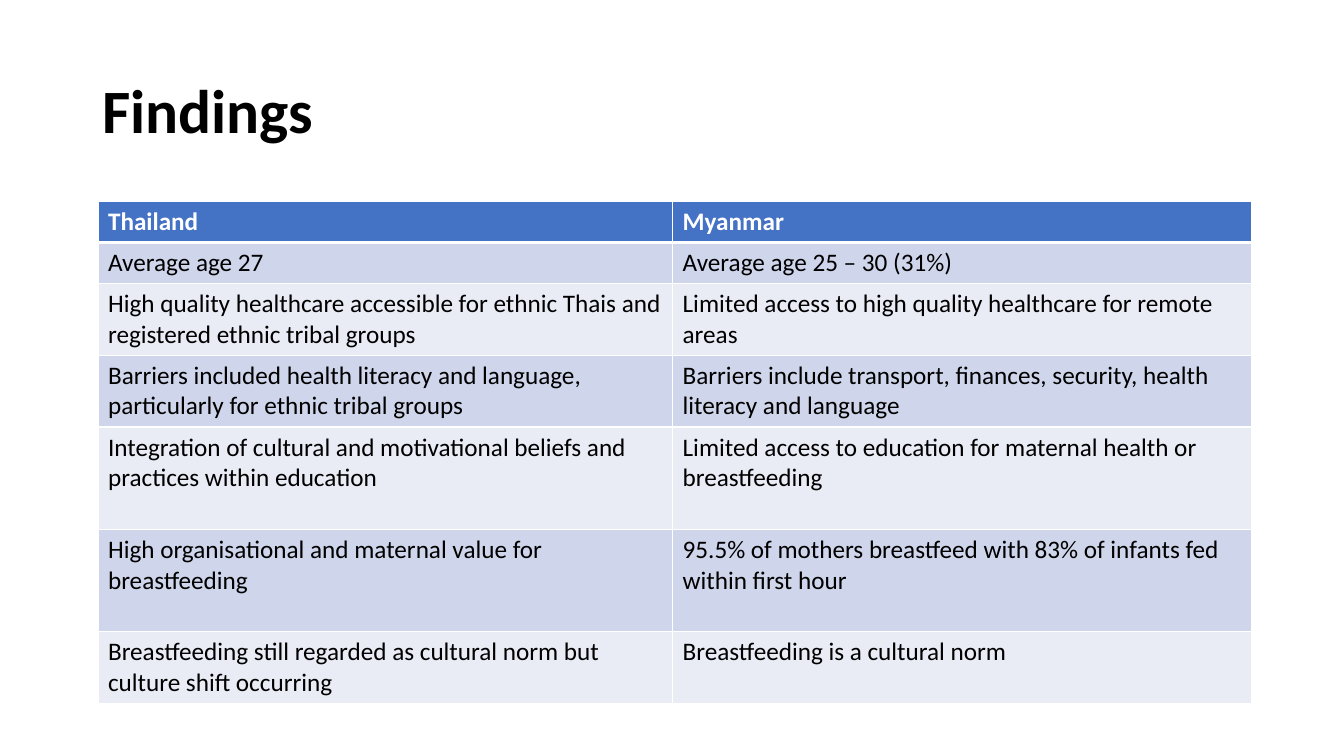
from dataclasses import dataclass

from lxml import etree
from pptx import Presentation
from pptx.dml.color import RGBColor
from pptx.enum.text import MSO_ANCHOR
from pptx.oxml.ns import qn
from pptx.slide import Slide
from pptx.table import _Cell
from pptx.util import Cm, Pt

MIDDLE = MSO_ANCHOR.MIDDLE
FONT = "Calibri"
BLACK, WHITE = "000000", "FFFFFF"
HEADER_FILL = "4472C4"
BAND_FILLS = ("E9EBF5", "CFD5EA")
COLUMN_WIDTHS = (14.48, 14.6)
THIN, THICK = 1, 3


@dataclass(frozen=True)
class Finding:
    thailand: str
    myanmar: str
    height: float


FINDINGS = (
    Finding("Thailand", "Myanmar", 1.03),
    Finding("Average age 27", "Average age 25 – 30 (31%)", 1.03),
    Finding(
        "High quality healthcare accessible for ethnic Thais and registered ethnic tribal groups",
        "Limited access to high quality healthcare for remote areas",
        1.81,
    ),
    Finding(
        "Barriers included health literacy and language, particularly for ethnic tribal groups",
        "Barriers include transport, finances, security, health literacy and language",
        1.81,
    ),
    Finding(
        "Integration of cultural and motivational beliefs and practices within education",
        "Limited access to education for maternal health or breastfeeding",
        2.58,
    ),
    Finding(
        "High organisational and maternal value for breastfeeding",
        "95.5% of mothers breastfeed with 83% of infants fed within first hour",
        2.58,
    ),
    Finding(
        "Breastfeeding still regarded as cultural norm but culture shift occurring",
        "Breastfeeding is a cultural norm",
        1.81,
    ),
)


def rgb(color: str) -> RGBColor:
    return RGBColor.from_string(color)


def set_text(p, text: str, size: float, color: str, bold: bool) -> None:
    p.text = text
    p.font.name = FONT
    p.font.size = Pt(size)
    p.font.bold = bold
    p.font.color.rgb = rgb(color)


def set_borders(cell: _Cell, top: float, bottom: float) -> None:
    tc_pr = cell._tc.get_or_add_tcPr()
    sides = {"a:lnL": THIN, "a:lnR": THIN, "a:lnT": top, "a:lnB": bottom}
    for i, (tag, width) in enumerate(sides.items()):
        ln = etree.Element(qn(tag), w=str(Pt(width)))
        fill = etree.SubElement(ln, qn("a:solidFill"))
        etree.SubElement(fill, qn("a:srgbClr"), val=WHITE)
        tc_pr.insert(i, ln)


def add_title(s: Slide, text: str) -> None:
    sp = s.shapes.add_textbox(Cm(2.33), Cm(1.01), Cm(29.21), Cm(3.68))
    tf = sp.text_frame
    tf.word_wrap = True
    tf.vertical_anchor = MIDDLE
    p = tf.paragraphs[0]
    p.line_spacing = 0.9
    set_text(p, text, 44, BLACK, True)


def add_findings(s: Slide, findings: tuple[Finding, ...]) -> None:
    height = sum(f.height for f in findings)
    table = s.shapes.add_table(
        len(findings), len(COLUMN_WIDTHS),
        Cm(2.47), Cm(5.08), Cm(sum(COLUMN_WIDTHS)), Cm(height),
    ).table
    for column, width in zip(table.columns, COLUMN_WIDTHS):
        column.width = Cm(width)
    for i, finding in enumerate(findings):
        table.rows[i].height = Cm(finding.height)
        header = i == 0
        for j, text in enumerate((finding.thailand, finding.myanmar)):
            cell = table.cell(i, j)
            cell.fill.solid()
            cell.fill.fore_color.rgb = rgb(HEADER_FILL if header else BAND_FILLS[i % 2])
            set_text(cell.text_frame.paragraphs[0], text, 18, WHITE if header else BLACK, header)
            set_borders(cell, THICK if i == 1 else THIN, THICK if header else THIN)


def main() -> None:
    prs = Presentation()
    prs.slide_width, prs.slide_height = Cm(33.87), Cm(19.05)
    s = prs.slides.add_slide(prs.slide_layouts[6])
    add_title(s, "Findings")
    add_findings(s, FINDINGS)
    prs.save("out.pptx")


if __name__ == "__main__":
    main()
